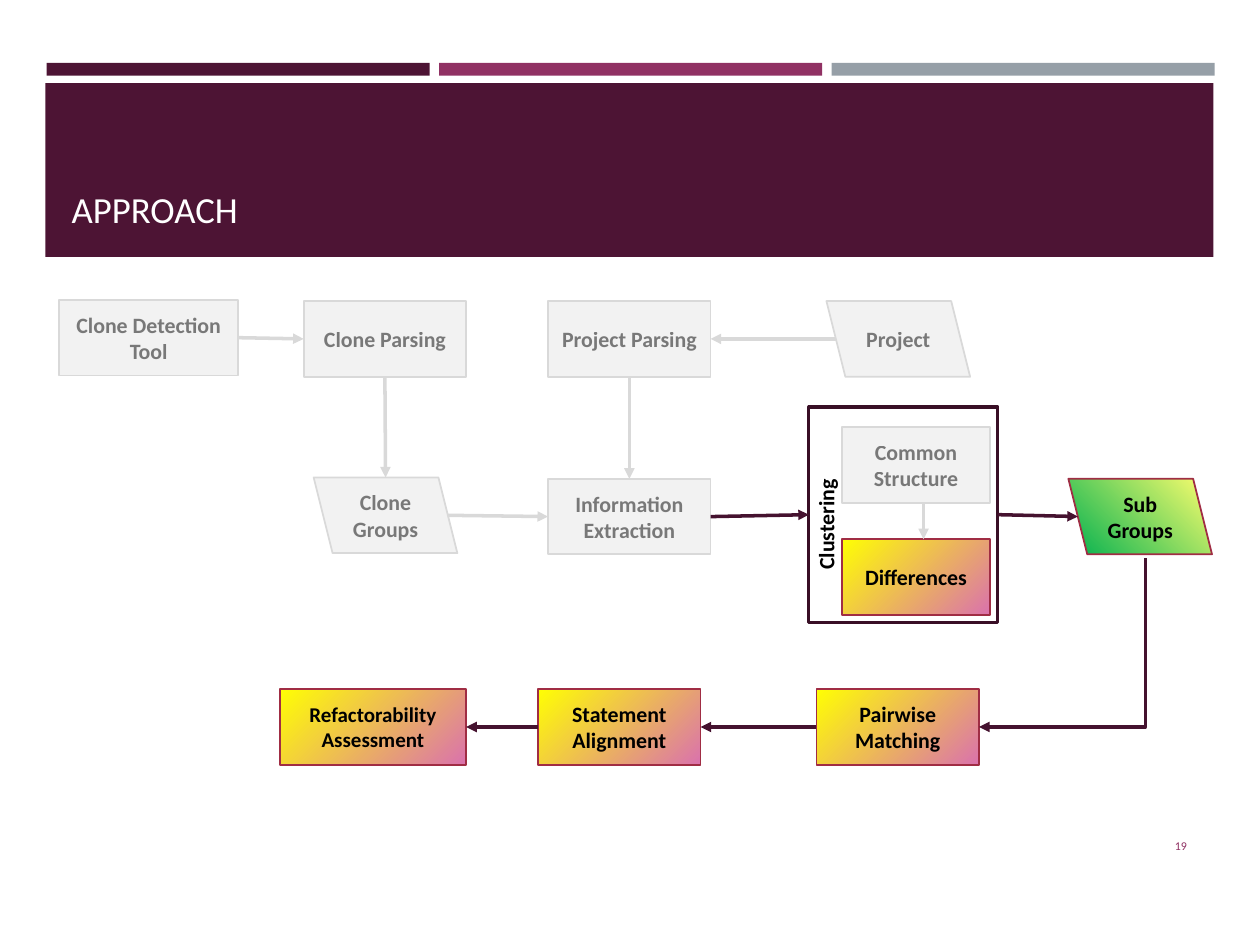
"""Build the approach slide: a clone refactoring pipeline as a flow chart."""
from dataclasses import dataclass
from enum import IntEnum

import pptx
import pptx.dml.color
import pptx.enum.dml
import pptx.enum.shapes
import pptx.enum.text
import pptx.oxml
import pptx.oxml.ns
import pptx.util

Inches = pptx.util.Inches
Pt = pptx.util.Pt
RGBColor = pptx.dml.color.RGBColor
Shape = pptx.enum.shapes.MSO_SHAPE
Connector = pptx.enum.shapes.MSO_CONNECTOR
Align = pptx.enum.text.PP_ALIGN
Anchor = pptx.enum.text.MSO_ANCHOR
qn = pptx.oxml.ns.qn

PLUM = RGBColor(0x4D, 0x14, 0x34)
MAGENTA = RGBColor(0x90, 0x31, 0x63)
STEEL = RGBColor(0x96, 0x9F, 0xA7)
ARROW_DARK = RGBColor(0x45, 0x12, 0x2F)
FRAME = RGBColor(0x39, 0x0F, 0x26)
CRIMSON = RGBColor(0xA0, 0x2D, 0x44)
PALE = RGBColor(0xF2, 0xF2, 0xF2)
GREY = RGBColor(0xD9, 0xD9, 0xD9)
YELLOW = RGBColor(0xFF, 0xFF, 0x03)
PINK = RGBColor(0xDA, 0x72, 0xAD)
LEMON = RGBColor(0xFF, 0xFF, 0x6E)
GREEN = RGBColor(0x00, 0xB0, 0x50)
BLACK = RGBColor(0, 0, 0)
WHITE = RGBColor(0xFF, 0xFF, 0xFF)

FONT = "Calibri"
NODE_HEIGHT = 0.6
SLANT = NODE_HEIGHT / 4


class Side(IntEnum):
    TOP = 0
    LEFT = 1
    BOTTOM = 2
    RIGHT = 3


@dataclass(frozen=True)
class Node:
    label: str
    left: float
    top: float
    width: float = 1.29
    height: float = NODE_HEIGHT
    fills: tuple = (PALE,)
    slanted: bool = False
    size: float = 12.5

    def point(self, side: Side) -> tuple[float, float]:
        """Return the middle of one side of the outline."""
        inset = SLANT / 2 if self.slanted else 0
        across, down = self.left + self.width / 2, self.top + self.height / 2
        return {
            Side.TOP: (across, self.top),
            Side.LEFT: (self.left + inset, down),
            Side.BOTTOM: (across, self.top + self.height),
            Side.RIGHT: (self.left + self.width - inset, down),
        }[side]


@dataclass(frozen=True)
class Link:
    source: Node
    source_side: Side
    target: Node
    target_side: Side
    color: RGBColor = GREY


ACTIVE = (YELLOW, PINK)
DETECTION = Node("Clone Detection Tool", 0.47, 2.38, 1.42)
CLONE_PARSING = Node("Clone Parsing", 2.41, 2.39)
PROJECT_PARSING = Node("Project Parsing", 4.35, 2.39)
PROJECT = Node("Project", 6.56, 2.39, 1.14, slanted=True)
CLONE_GROUPS = Node("Clone Groups", 2.49, 3.79, 1.14, slanted=True)
EXTRACTION = Node("Information Extraction", 4.35, 3.8)
CLUSTER = Node("", 6.42, 3.23, 1.5, 1.71, fills=())
COMMON = Node("Common Structure", 6.68, 3.39, 1.18)
DIFFERENCES = Node("Differences", 6.68, 4.28, 1.18, fills=ACTIVE)
SUB_GROUPS = Node("Sub Groups", 8.48, 3.8, 1.14, fills=(LEMON, GREEN), slanted=True)
MATCHING = Node("Pairwise Matching", 6.48, 5.47, fills=ACTIVE)
ALIGNMENT = Node("Statement Alignment", 4.27, 5.47, fills=ACTIVE)
ASSESSMENT = Node("Refactorability Assessment", 2.22, 5.47, 1.48, fills=ACTIVE, size=12)

NODES = (DETECTION, CLONE_PARSING, PROJECT_PARSING, PROJECT, CLONE_GROUPS, EXTRACTION,
         CLUSTER, COMMON, DIFFERENCES, SUB_GROUPS, MATCHING, ALIGNMENT, ASSESSMENT)
LINKS = (
    Link(DETECTION, Side.RIGHT, CLONE_PARSING, Side.LEFT),
    Link(PROJECT, Side.LEFT, PROJECT_PARSING, Side.RIGHT),
    Link(CLONE_PARSING, Side.BOTTOM, CLONE_GROUPS, Side.TOP),
    Link(PROJECT_PARSING, Side.BOTTOM, EXTRACTION, Side.TOP),
    Link(CLONE_GROUPS, Side.RIGHT, EXTRACTION, Side.LEFT),
    Link(EXTRACTION, Side.RIGHT, CLUSTER, Side.LEFT, ARROW_DARK),
    Link(CLUSTER, Side.RIGHT, SUB_GROUPS, Side.LEFT, ARROW_DARK),
    Link(MATCHING, Side.LEFT, ALIGNMENT, Side.RIGHT, ARROW_DARK),
    Link(ALIGNMENT, Side.LEFT, ASSESSMENT, Side.RIGHT, ARROW_DARK),
)


def write(box, text: str, size: float, color: RGBColor, align=Align.LEFT,
          anchor=Anchor.MIDDLE, bold: bool = False, wrap: bool = True):
    """Put one styled paragraph in a shape and return it."""
    box.text_frame.word_wrap = wrap
    box.text_frame.vertical_anchor = anchor
    para = box.text_frame.paragraphs[0]
    para.text = text
    para.alignment = align
    para.font.name = FONT
    para.font.size = Pt(size)
    para.font.bold = bold
    para.font.color.rgb = color
    return para


def add_box(page, kind, left: float, top: float, width: float, height: float):
    """Add a preset shape without a shadow."""
    box = page.shapes.add_shape(kind, Inches(left), Inches(top), Inches(width), Inches(height))
    box.shadow.inherit = False
    return box


def add_bar(page, left: float, top: float, width: float, height: float, color: RGBColor) -> None:
    """Add a plain filled band."""
    bar = add_box(page, Shape.RECTANGLE, left, top, width, height)
    bar.fill.solid()
    bar.fill.fore_color.rgb = color
    bar.line.fill.background()


def add_label(page, left: float, top: float, width: float, height: float, *args, **style):
    """Add a text box with one styled paragraph."""
    label = page.shapes.add_textbox(Inches(left), Inches(top), Inches(width), Inches(height))
    write(label, *args, **style)
    return label


def add_node(page, node: Node):
    """Draw a flow chart step: faded, active with a gradient, or an open frame."""
    kind = Shape.PARALLELOGRAM if node.slanted else Shape.RECTANGLE
    box = add_box(page, kind, node.left, node.top, node.width, node.height)
    if node.slanted:
        box._element.spPr.find(qn("a:xfrm")).set("flipH", "1")
    if not node.fills:
        box.fill.background()
        box.line.color.rgb = FRAME
        box.line.width = Pt(1.75)
        return box
    faded = len(node.fills) == 1
    if faded:
        box.fill.solid()
        box.fill.fore_color.rgb = node.fills[0]
    else:
        box.fill.gradient()
        box.fill.gradient_angle = 315
        for stop, color in zip(box.fill.gradient_stops, node.fills):
            stop.color.rgb = color
    box.line.color.rgb = GREY if faded else CRIMSON
    box.line.width = Pt(1)
    para = write(box, node.label, node.size, BLACK, Align.CENTER, bold=True)
    if faded:
        for color in para._p.iter(qn("a:srgbClr")):
            pptx.oxml.parse_xml(f'<a:alpha {pptx.oxml.ns.nsdecls("a")} val="50000"/>')
            color.append(color.makeelement(qn("a:alpha"), {"val": "50000"}))
    return box


def add_arrow(page, begin: tuple, end: tuple, color: RGBColor, kind=Connector.STRAIGHT):
    """Add a shadowless connector with a triangle at its end."""
    arrow = page.shapes.add_connector(kind, *map(Inches, begin + end))
    arrow.line.color.rgb = color
    arrow.line.width = Pt(2)
    line = arrow.line._get_or_add_ln()
    line.append(line.makeelement(qn("a:tailEnd"), {"type": "triangle"}))
    properties = arrow._element.spPr
    properties.append(properties.makeelement(qn("a:effectLst"), {}))
    return arrow


def add_link(page, link: Link, boxes: dict) -> None:
    """Connect two steps, joining the ends that meet a rectangle."""
    arrow = add_arrow(page, link.source.point(link.source_side),
                      link.target.point(link.target_side), link.color)
    if not link.source.slanted:
        arrow.begin_connect(boxes[link.source], int(link.source_side))
    if not link.target.slanted:
        arrow.end_connect(boxes[link.target], int(link.target_side))


def main() -> None:
    """Assemble and save the slide."""
    deck = pptx.Presentation()
    deck.slide_width, deck.slide_height = Inches(10), Inches(7.5)
    page = deck.slides.add_slide(deck.slide_layouts[6])
    for index, color in enumerate((PLUM, MAGENTA, STEEL)):
        add_bar(page, 0.37 + index * 3.115, 0.5, 3.04, 0.1, color)
    add_bar(page, 0.36, 0.66, 9.27, 1.38, PLUM)
    add_label(page, 0.47, 0.8, 9.05, 1.08, "APPROACH", 21, WHITE, anchor=Anchor.BOTTOM)
    add_label(page, 8.66, 6.51, 0.86, 0.4, "19", 6.8, MAGENTA, align=Align.RIGHT)
    boxes = {node: add_node(page, node) for node in NODES}
    for link in LINKS:
        add_link(page, link, boxes)
    add_arrow(page, (7.33, 3.99), (7.33, 4.28), GREY)
    bend = add_arrow(page, (7.76, 4.44), (9.1, 5.76), ARROW_DARK, Connector.ELBOW)
    bend._element.spPr.find(qn("a:prstGeom")).set("prst", "bentConnector2")
    bend._element.spPr.find(qn("a:xfrm")).set("rot", "5400000")
    caption = add_label(page, 6.03, 3.94, 1.05, 0.31, "Clustering", 12.5, BLACK,
                        anchor=Anchor.TOP, bold=True, wrap=False)
    caption.rotation = 270
    deck.save("out.pptx")


if __name__ == "__main__":
    main()
